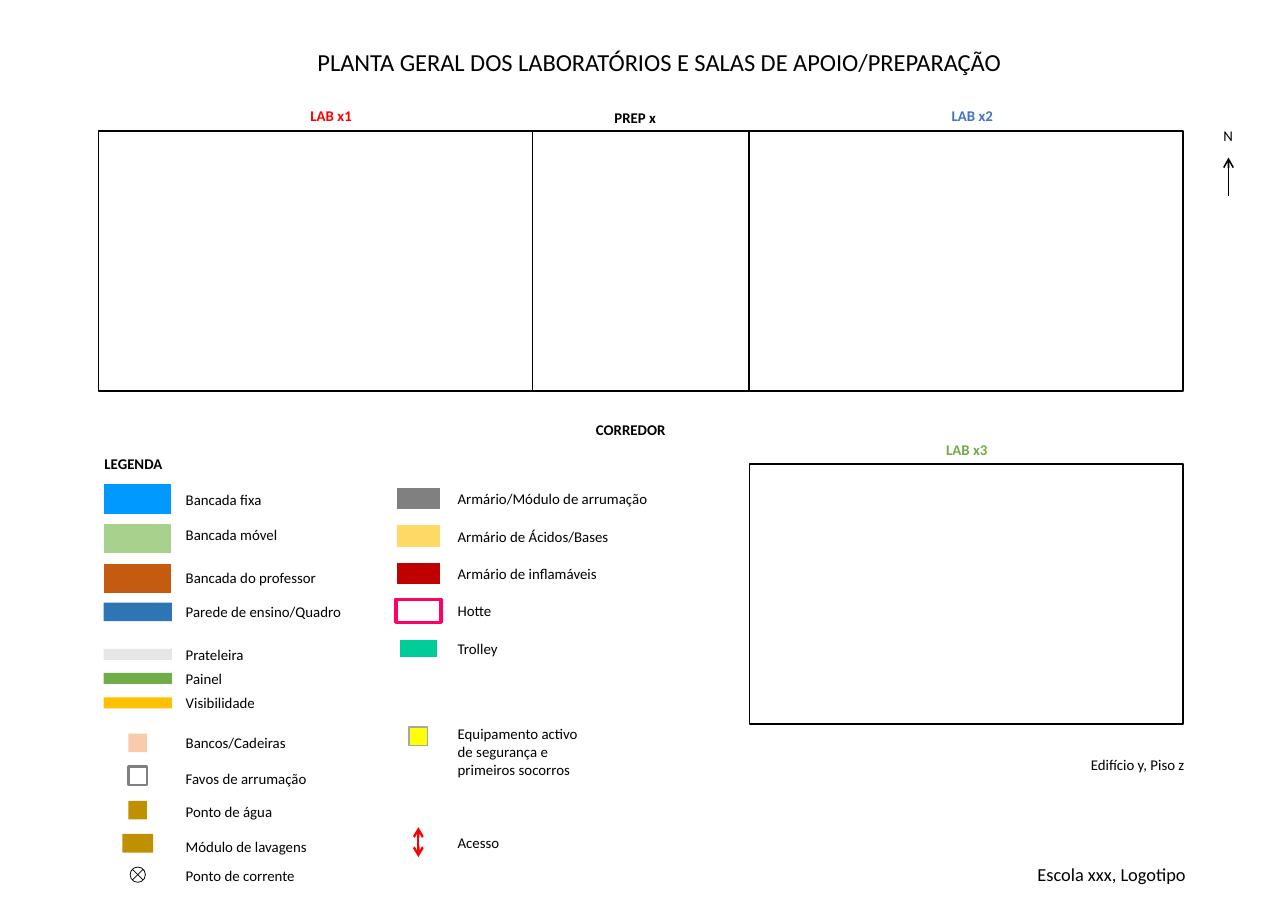
from lxml import etree
from pptx import Presentation
from pptx import util as u
from pptx.dml import color
from pptx.enum import shapes, text
from pptx.oxml import ns

COLORS = {
    "black": "000000", "white": "FFFFFF", "red": "FF0000", "blue": "4472C4",
    "green": "70AD47", "sky": "0099FF", "lime": "A9D18E", "brown": "C55A11",
    "navy": "2E75B6", "light": "E7E6E6", "amber": "FFC000", "peach": "F8CBAD",
    "ochre": "BF9000", "gray": "808080", "sand": "FFD966", "crimson": "C00000",
    "pink": "FF0066", "mint": "00CC99", "yellow": "FFFF00", "silver": "A6A6A6",
}
FONT = "Calibri"
SIZE = 9.7
LABEL_HEIGHT = 19
LEFT, CENTER, RIGHT = text.PP_ALIGN.LEFT, text.PP_ALIGN.CENTER, text.PP_ALIGN.RIGHT
RECT = shapes.MSO_SHAPE.RECTANGLE
JUNCTION = shapes.MSO_SHAPE.FLOWCHART_SUMMING_JUNCTION

ROOM_LEFT, ROOM_TOP, LOWER_TOP = 64.4, 85.6, 303.2
LAB_WIDTH, PREP_WIDTH, ROOM_HEIGHT = 283.5, 141.75, 170.1
PREP_LEFT = ROOM_LEFT + LAB_WIDTH
LAB2_LEFT = PREP_LEFT + PREP_WIDTH
ROOMS = [
    (ROOM_LEFT, ROOM_TOP, LAB_WIDTH),
    (PREP_LEFT, ROOM_TOP, PREP_WIDTH),
    (LAB2_LEFT, ROOM_TOP, LAB_WIDTH),
    (LAB2_LEFT, LOWER_TOP, LAB_WIDTH),
]
ROOM_NAMES = [
    ("LAB x1", 167.8, 66.2, "red"),
    ("PREP x", 366.5, 67.7, "black"),
    ("LAB x2", 586.8, 66.2, "blue"),
    ("LAB x3", 583.2, 284.4, "green"),
    ("CORREDOR", 363.6, 271.4, "black"),
]

BENCH = (44.6, 20.2)
STRIP = (44.6, 7.2)
CABINET = (29.5, 15.1)
SQUARE = (12.2, 12.2)
WHITE_EDGE = ("white", 1)
BENCH_LEGEND = [
    ("Bancada fixa", 317.5, 326.2, BENCH, "sky", WHITE_EDGE),
    ("Bancada móvel", 339.8, 352.1, BENCH, "lime", WHITE_EDGE),
    ("Bancada do professor", 367.9, 378, BENCH, "brown", WHITE_EDGE),
    ("Parede de ensino/Quadro", 390.2, 400, (44.6, 12.2), "navy", None),
    ("Prateleira", 418.3, 427.7, STRIP, "light", None),
    ("Painel", 434.2, 443.5, STRIP, "green", None),
    ("Visibilidade", 450, 459.4, STRIP, "amber", None),
    ("Bancos/Cadeiras", 475.9, 485.6, SQUARE, "peach", None),
    ("Favos de arrumação", 499.7, 507.2, SQUARE, None, ("gray", 1.5)),
    ("Ponto de água", 521.3, 529.6, SQUARE, "ochre", None),
    ("Módulo de lavagens", 544.3, 551.2, (20.2, 12.2), "ochre", None),
]
CABINET_LEGEND = [
    ("Armário/Módulo de arrumação", 316.8, 325.8, CABINET, "gray", WHITE_EDGE),
    ("Armário de Ácidos/Bases", 341.3, 350.3, CABINET, "sand", WHITE_EDGE),
    ("Armário de inflamáveis", 365.8, 374.8, CABINET, "crimson", WHITE_EDGE),
    ("Hotte", 389.5, 399.2, CABINET, None, ("pink", 2.25)),
    ("Trolley", 414.7, 423.7, (25.2, 12.2), "mint", WHITE_EDGE),
]
BENCH_CENTER, BENCH_LABEL = 90, 114.3
CABINET_CENTER, CABINET_LABEL = 273.4, 292
LABEL_WIDTH = 147


def rgb(name):
    return color.RGBColor.from_string(COLORS[name])


def place(item, left, top, width, height):
    item.left, item.top = u.Pt(left), u.Pt(top)
    item.width, item.height = u.Pt(width), u.Pt(height)


def write(box, words, size=SIZE, bold=False, ink="black", align=LEFT):
    frame = box.text_frame
    frame.word_wrap = True
    frame.auto_size = text.MSO_AUTO_SIZE.NONE
    frame.vertical_anchor = text.MSO_ANCHOR.TOP
    para = frame.paragraphs[0]
    para.alignment = align
    span = para.add_run()
    span.text = words
    span.font.name = FONT
    span.font.size = u.Pt(size)
    span.font.bold = bold
    span.font.color.rgb = rgb(ink)


def add_label(parent, words, left, top, width, height=LABEL_HEIGHT, **style):
    box = parent.add_textbox(u.Pt(left), u.Pt(top), u.Pt(width), u.Pt(height))
    write(box, words, **style)


def add_block(parent, left, top, width, height, fill=None, edge=None, kind=RECT):
    block = parent.add_shape(kind, u.Pt(left), u.Pt(top), u.Pt(width), u.Pt(height))
    block.shadow.inherit = False
    if fill:
        block.fill.solid()
        block.fill.fore_color.rgb = rgb(fill)
    else:
        block.fill.background()
    if edge:
        block.line.color.rgb = rgb(edge[0])
        block.line.width = u.Pt(edge[1])
    else:
        block.line.fill.background()


def add_arrow(parent, x, start, end, ink, weight, ends):
    arrow = parent.add_connector(
        shapes.MSO_CONNECTOR.STRAIGHT, u.Pt(x), u.Pt(start), u.Pt(x), u.Pt(end))
    arrow.line.color.rgb = rgb(ink)
    arrow.line.width = u.Pt(weight)
    line = arrow.line._get_or_add_ln()
    for end_name in ends:
        etree.SubElement(line, ns.qn(f"a:{end_name}"), type="arrow")
    etree.SubElement(arrow._element.spPr, ns.qn("a:effectLst"))


def add_legend(parent, rows, center, label_left):
    for words, label_top, middle, (width, height), fill, edge in rows:
        add_block(parent, center - width / 2, middle - height / 2,
                  width, height, fill, edge)
        add_label(parent, words, label_left, label_top, LABEL_WIDTH)


def add_symbols(parent):
    add_block(parent, 85, 566.7, 10, 10, edge=("black", 0.5), kind=JUNCTION)
    add_label(parent, "Ponto de corrente", BENCH_LABEL, 563, LABEL_WIDTH)
    add_block(parent, CABINET_CENTER - 6.1, 475.2, *SQUARE, "yellow", ("silver", 1))
    add_label(parent, "Equipamento activo de segurança e primeiros socorros",
              CABINET_LABEL, 470.2, 97.2, 42.5)
    add_arrow(parent, CABINET_CENTER, 540.7, 560.2, "red", 1.5, ["headEnd", "tailEnd"])
    add_label(parent, "Acesso", CABINET_LABEL, 541.4, LABEL_WIDTH)


def add_north(parent):
    north = parent.add_group_shape().shapes
    add_arrow(north, 802.8, 128.2, 103, "black", 1, ["tailEnd"])
    add_label(north, "N", 792.4, 79.2, 20.9)


def main():
    deck = Presentation()
    deck.slide_width, deck.slide_height = u.Pt(841.68), u.Pt(595.44)
    page = deck.slides.add_slide(deck.slide_layouts[5])
    title = page.shapes.title
    place(title, 169.2, 27.4, 523.4, 26.7)
    write(title, "PLANTA GERAL DOS LABORATÓRIOS E SALAS DE APOIO/PREPARAÇÃO",
          size=16, align=CENTER)

    for left, top, width in ROOMS:
        add_block(page.shapes, left, top, width, ROOM_HEIGHT, edge=("black", 1))
    for words, left, top, ink in ROOM_NAMES:
        add_label(page.shapes, words, left, top, 97.2, bold=True, ink=ink, align=CENTER)
    add_north(page.shapes)

    add_label(page.shapes, "LEGENDA", 61.2, 293.8, 54, bold=True)
    add_legend(page.shapes, BENCH_LEGEND, BENCH_CENTER, BENCH_LABEL)
    add_legend(page.shapes, CABINET_LEGEND, CABINET_CENTER, CABINET_LABEL)
    add_symbols(page.shapes)

    add_label(page.shapes, "Edifício y, Piso z", 684, 490.3, 97.2, align=RIGHT)
    add_label(page.shapes, "Escola xxx, Logotipo", 409, 560.9, 373, 21.6,
              size=12, align=RIGHT)
    deck.save("out.pptx")


if __name__ == "__main__":
    main()
